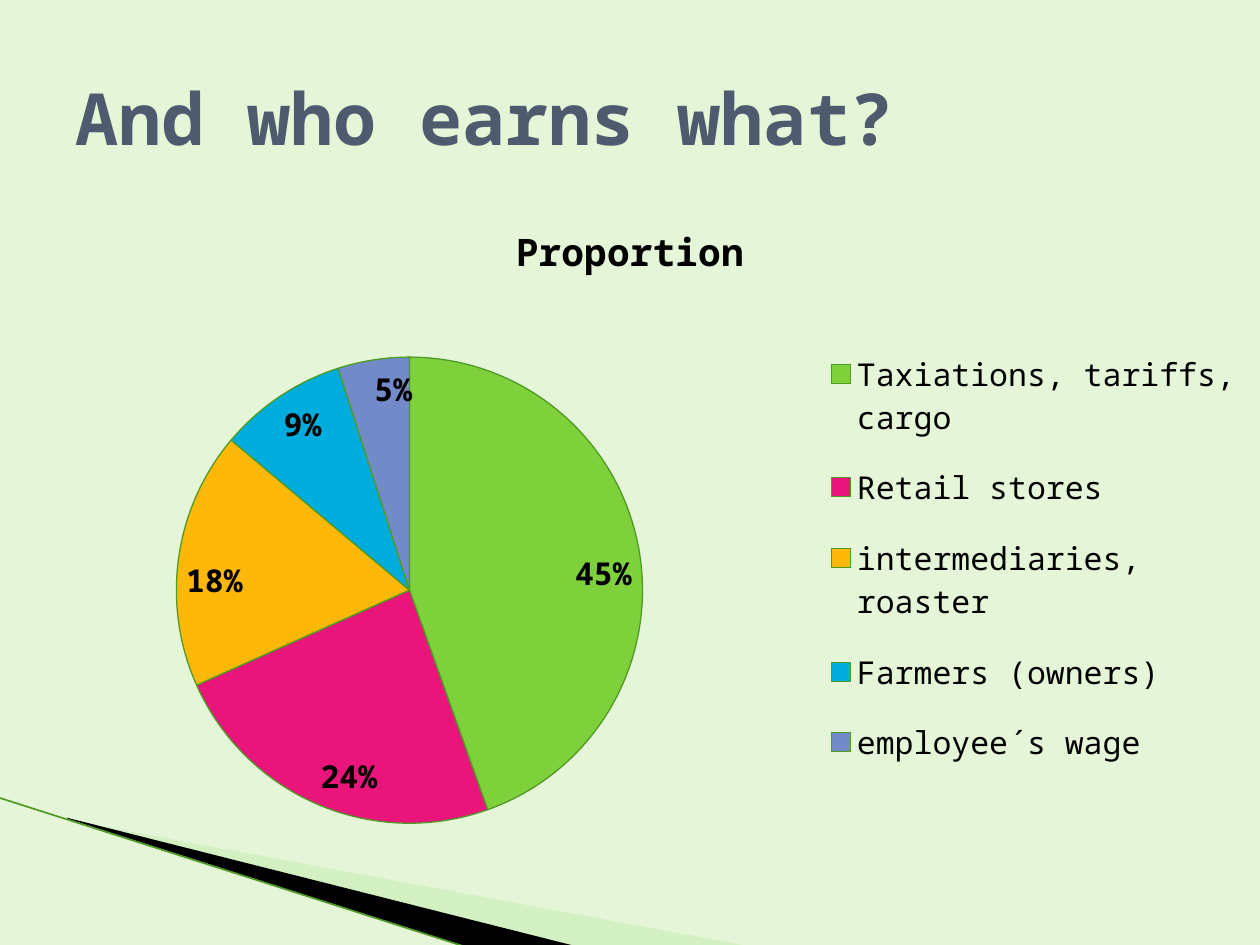
import pptx
import pptx.chart.data
import pptx.dml.color
import pptx.enum.chart
import pptx.enum.shapes
import pptx.enum.text
import pptx.oxml
import pptx.oxml.ns
import pptx.util

Pt = pptx.util.Pt
FONT = "Noto Sans Mono"
EDGE = "4E9A24"


def color(code):
    return pptx.dml.color.RGBColor.from_string(code)


def node(tag, **attrs):
    """Make an empty XML element such as a:alpha."""
    item = pptx.oxml.parse_xml(f"<{tag} {pptx.oxml.ns.nsdecls(tag.split(':')[0])}/>")
    for name, value in attrs.items():
        item.set(name, str(value))
    return item


def place(owner, x, y, w, h, inner=False):
    """Fix a chart part at fractions of the chart area."""
    layout = owner.get_or_add_layout() if hasattr(owner, "get_or_add_layout") else None
    if layout is None:
        layout = owner.find(pptx.oxml.ns.qn("c:layout"))
    if layout is None:
        layout = node("c:layout")
        owner.insert(0, layout)
    for child in list(layout):
        layout.remove(child)
    manual = node("c:manualLayout")
    layout.append(manual)
    if inner:
        manual.append(node("c:layoutTarget", val="inner"))
    for tag in ("xMode", "yMode"):
        manual.append(node(f"c:{tag}", val="edge"))
    for tag, value in zip("xywh", (x, y, w, h)):
        manual.append(node(f"c:{tag}", val=value))


class Page:
    def __init__(self, deck, back):
        self.slide = deck.slides.add_slide(deck.slide_layouts[6])
        self.shapes = self.slide.shapes
        fill = self.slide.background.fill
        fill.solid()
        fill.fore_color.rgb = color(back)

    def font(self, font, size, code, bold=False):
        font.name, font.size, font.bold = FONT, Pt(size), bold
        font.color.rgb = color(code)

    def wedge(self, points, code, alpha=None):
        start, *rest = [(Pt(x), Pt(y)) for x, y in points]
        build = self.shapes.build_freeform(*start)
        build.add_line_segments(rest, close=True)
        shape = build.convert_to_shape()
        shape.shadow.inherit = False
        shape.line.fill.background()
        shape.fill.solid()
        shape.fill.fore_color.rgb = color(code)
        if alpha:
            fill = shape.fill._xPr.find(pptx.oxml.ns.qn("a:solidFill"))
            fill[0].append(node("a:alpha", val=alpha * 1000))

    def line(self, x1, y1, x2, y2, code, width):
        kind = pptx.enum.shapes.MSO_CONNECTOR.STRAIGHT
        line = self.shapes.add_connector(kind, Pt(x1), Pt(y1), Pt(x2), Pt(y2))
        line.line.color.rgb = color(code)
        line.line.width = Pt(width)
        line._element.spPr.append(node("a:effectLst"))

    def text(self, x, y, w, h, words, size, code):
        frame = self.shapes.add_textbox(Pt(x), Pt(y), Pt(w), Pt(h)).text_frame
        frame.word_wrap = True
        frame.vertical_anchor = pptx.enum.text.MSO_ANCHOR.MIDDLE
        para = frame.paragraphs[0]
        para.text = words
        self.font(para.font, size, code, True)

    def pie(self, x, y, w, h, title, parts):
        data = pptx.chart.data.CategoryChartData()
        data.categories = [name for name, _, _ in parts]
        data.add_series(title, [value for _, value, _ in parts])
        kind = pptx.enum.chart.XL_CHART_TYPE.PIE
        chart = self.shapes.add_chart(kind, Pt(x), Pt(y), Pt(w), Pt(h), data).chart
        self.font(chart.font, 18, "000000")

        chart.has_title = True
        para = chart.chart_title.text_frame.paragraphs[0]
        para.text = title
        self.font(para.font, 21.6, "000000", True)

        chart.has_legend = True
        chart.legend.position = pptx.enum.chart.XL_LEGEND_POSITION.RIGHT
        chart.legend.include_in_layout = False
        self.font(chart.legend.font, 18, "000000")
        legend = chart.legend._element
        if legend.find(pptx.oxml.ns.qn("c:layout")) is None:
            legend.insert(1, node("c:layout"))
        place(legend, 0.65, 0.2, 0.34, 0.72)

        plot = chart.plots[0]
        plot.vary_by_categories = True
        place(chart._chartSpace.chart.plotArea, 0.14, 0.25, 0.37, 0.72, True)
        for spot, (_, _, code) in enumerate(parts):
            style = plot.series[0].points[spot].format
            style.fill.solid()
            style.fill.fore_color.rgb = color(code)
            style.line.color.rgb = color(EDGE)
            style.line.width = Pt(0.75)

        plot.has_data_labels = True
        labels = plot.data_labels
        labels.show_percentage = True
        labels.show_value = False
        labels.number_format = "0%"
        labels.number_format_is_linked = False
        labels.position = pptx.enum.chart.XL_LABEL_POSITION.INSIDE_END
        self.font(labels.font, 18, "000000", True)


def main():
    deck = pptx.Presentation()
    deck.slide_width, deck.slide_height = Pt(720), Pt(540)
    page = Page(deck, "E5F6D8")
    page.wedge([(39.6, 468.7), (428.4, 540.7), (328.3, 540.7), (39.6, 468)], "B8E7A1", 40)
    page.wedge([(38.2, 467.3), (329, 540.7), (267.8, 541.4), (38.9, 468)], "000000")
    page.line(-0.7, 455.8, 267.1, 541.4, EDGE, 0.95)
    page.text(36, 21.6, 648, 90, "And who earns what?", 41, "4E5B6F")
    page.pie(0, 111.6, 720, 370, "Proportion", [
        ("Taxiations, tariffs, cargo", 45, "7FD13B"),
        ("Retail stores", 24, "EA157A"),
        ("intermediaries, roaster", 18, "FEB80A"),
        ("Farmers (owners)", 9, "00ADDC"),
        ("employee´s wage", 5, "738AC8"),
    ])
    deck.save("out.pptx")


if __name__ == "__main__":
    main()
